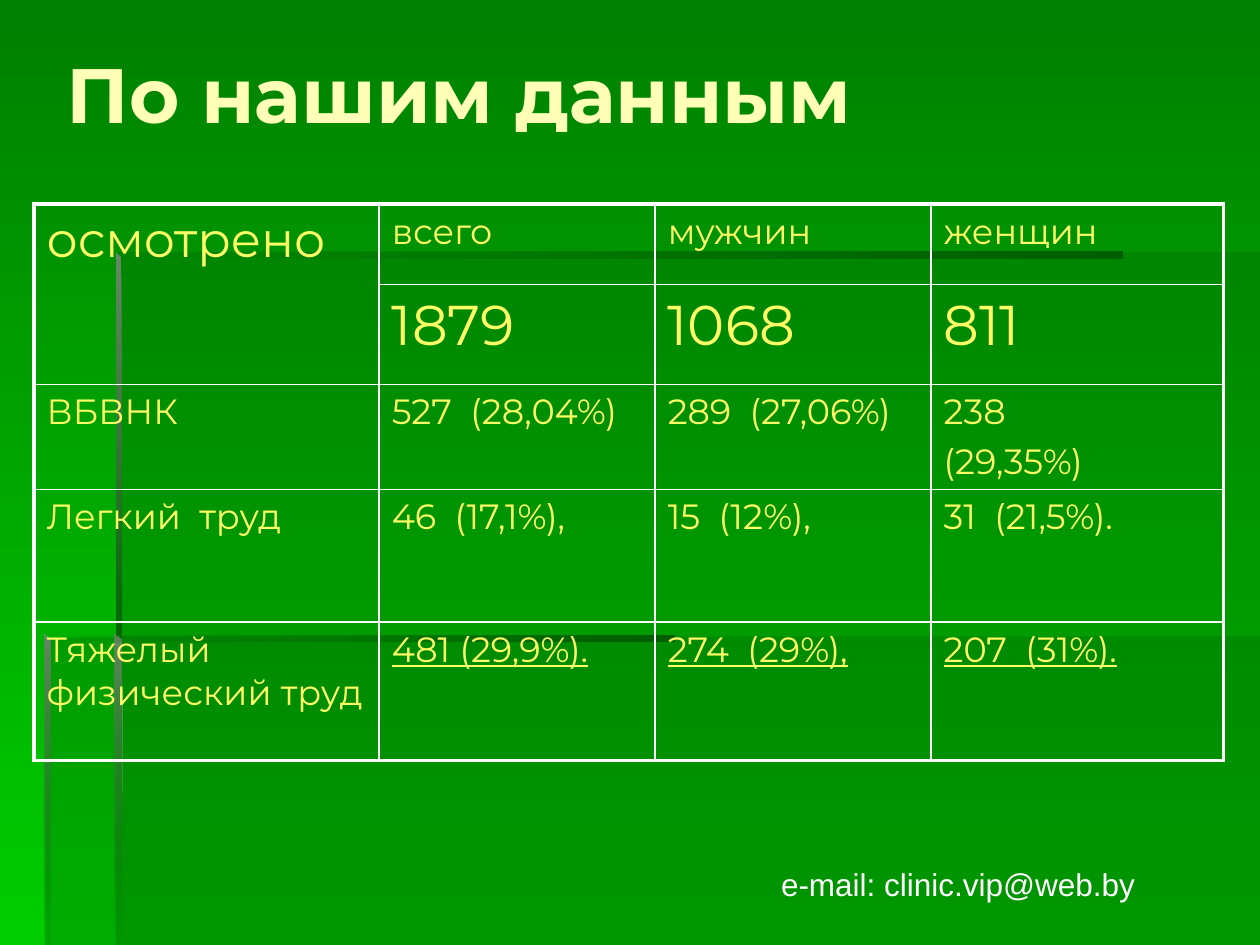
"""Build a slide with a table of examination results on a green background."""
from lxml.etree import SubElement
from pptx import Presentation
from pptx.dml.color import RGBColor
from pptx.enum.text import MSO_ANCHOR as Anchor, MSO_AUTO_SIZE as AutoSize, PP_ALIGN as Align
from pptx.oxml.ns import qn
from pptx.util import Inches, Pt

GREEN = RGBColor(0x00, 0x80, 0x00)
BRIGHT = RGBColor(0x00, 0xCC, 0x00)
DARK = RGBColor(0x00, 0x66, 0x00)
DEEP = RGBColor(0x00, 0x5E, 0x00)
GREY = RGBColor(0x66, 0x86, 0x66)
CREAM = RGBColor(0xFF, 0xFF, 0xB7)
YELLOW = RGBColor(0xFF, 0xFF, 0x66)
WHITE = RGBColor(0xFF, 0xFF, 0xFF)
DOWN, ACROSS = 270, 0

deck = Presentation()
deck.slide_width, deck.slide_height = Inches(10), Inches(7.5)
UNIT = deck.slide_width // 1000
page = deck.slides.add_slide(deck.slide_layouts[5])


def paint_gradient(fill, colours, angle):
    fill.gradient()
    fill.gradient_angle = angle
    for stop, position, colour in zip(fill.gradient_stops, (0, 1), colours):
        stop.position = position
        stop.color.rgb = colour


def write(para, text, **format_values):
    span = para.add_run()
    span.text = text
    span.font.color.rgb = format_values.pop("colour")
    for name, value in format_values.items():
        setattr(span.font, name, value)


paint_gradient(page.background.fill, (GREEN, BRIGHT), DOWN)

decorations = [
    ([(92, 505), (92, 750), (1000, 750), (1000, 505)], (DARK,), (30,), None),
    ([(94, 506), (36, 506), (36, 750), (1000, 750), (1000, 200), (94, 200)], (DARK,), (30,), None),
    ([(92, 200), (92, 205), (891, 205), (891, 200)], (DARK, DEEP), (0, 100), ACROSS),
    ([(92, 200), (92, 510), (97, 510), (96, 204)], (GREY, DARK), (100, 100), DOWN),
    ([(91, 750), (97, 750), (96, 508), (91, 504)], (GREY, DARK), (100, 0), DOWN),
    ([(35, 504), (35, 509), (535, 509), (535, 504)], (DARK, DEEP), (0, 100), ACROSS),
    ([(35, 504), (35, 750), (40, 750), (40, 509)], (GREY, DARK), (100, 10), DOWN),
]
for points, colours, opacities, angle in decorations:
    outline = page.shapes.build_freeform(*points[0], scale=UNIT)
    outline.add_line_segments(points[1:], close=True)
    panel = outline.convert_to_shape()
    panel.shadow.inherit = False
    panel.line.fill.background()
    if angle is None:
        panel.fill.solid()
        panel.fill.fore_color.rgb = colours[0]
    else:
        paint_gradient(panel.fill, colours, angle)
    for tint, opacity in zip(panel._element.spPr.iter(qn("a:srgbClr")), opacities):
        SubElement(tint, qn("a:alpha"), val=str(opacity * 1000))

title = page.shapes.title
title.left, title.top, title.width, title.height = (UNIT * n for n in (43, 28, 917, 91))
title.text_frame.auto_size = AutoSize.NONE
title.text_frame.vertical_anchor = Anchor.MIDDLE
heading = title.text_frame.paragraphs[0]
heading.alignment = Align.LEFT
write(heading, "По нашим данным", colour=CREAM, name="Montserrat", size=Pt(44), bold=True)
page.shapes._spTree.append(title._element)

rows = [
    ["осмотрено", "всего", "мужчин", "женщин"],
    ["", "1879", "1068", "811"],
    ["ВБВНК", "527  (28,04%)", "289  (27,06%)", "238\n(29,35%)"],
    ["Легкий  труд", "46  (17,1%),", "15  (12%),", "31  (21,5%)."],
    ["Тяжелый физический труд", "481 (29,9%).", "274  (29%),", "207  (31%)."],
]
column_widths = [274, 219, 219, 232]
row_heights = [64, 79, 83, 105, 110]
last_row, last_column = len(rows) - 1, len(column_widths) - 1
grid = page.shapes.add_table(
    len(rows), len(column_widths), UNIT * 27, UNIT * 162,
    UNIT * sum(column_widths), UNIT * sum(row_heights)).table
grid.first_row = grid.horz_banding = False
for column, width in zip(grid.columns, column_widths):
    column.width = UNIT * width
for row, height in zip(grid.rows, row_heights):
    row.height = UNIT * height
grid.cell(0, 0).merge(grid.cell(1, 0))

for r, texts in enumerate(rows):
    for c, text in enumerate(texts):
        cell = grid.cell(r, c)
        outer = {"L": c == 0, "R": c == last_column, "T": r == 0, "B": r == last_row}
        properties = cell._tc.get_or_add_tcPr()
        for side, is_outer in outer.items():
            border = SubElement(properties, qn(f"a:ln{side}"), w=str(Pt(2.25 if is_outer else 1)))
            SubElement(SubElement(border, qn("a:solidFill")), qn("a:srgbClr"), val=str(WHITE))
        cell.fill.background()
        if not text:
            continue
        size = 28 if (r, c) == (0, 0) else 32 if r == 1 else 20
        for i, line in enumerate(text.split("\n")):
            para = cell.text_frame.add_paragraph() if i else cell.text_frame.paragraphs[0]
            para.space_before = Pt(size * 0.2)
            write(para, line, colour=YELLOW, name="Montserrat", size=Pt(size),
                  underline=r == last_row and c > 0)

contact = page.shapes.add_textbox(*(UNIT * n for n in (610, 682, 362, 40)))
contact.text_frame.word_wrap = True
write(contact.text_frame.paragraphs[0], "е-mail: clinic.vip@web.by",
      colour=WHITE, name="Arial", size=Pt(18))

deck.save("out.pptx")
